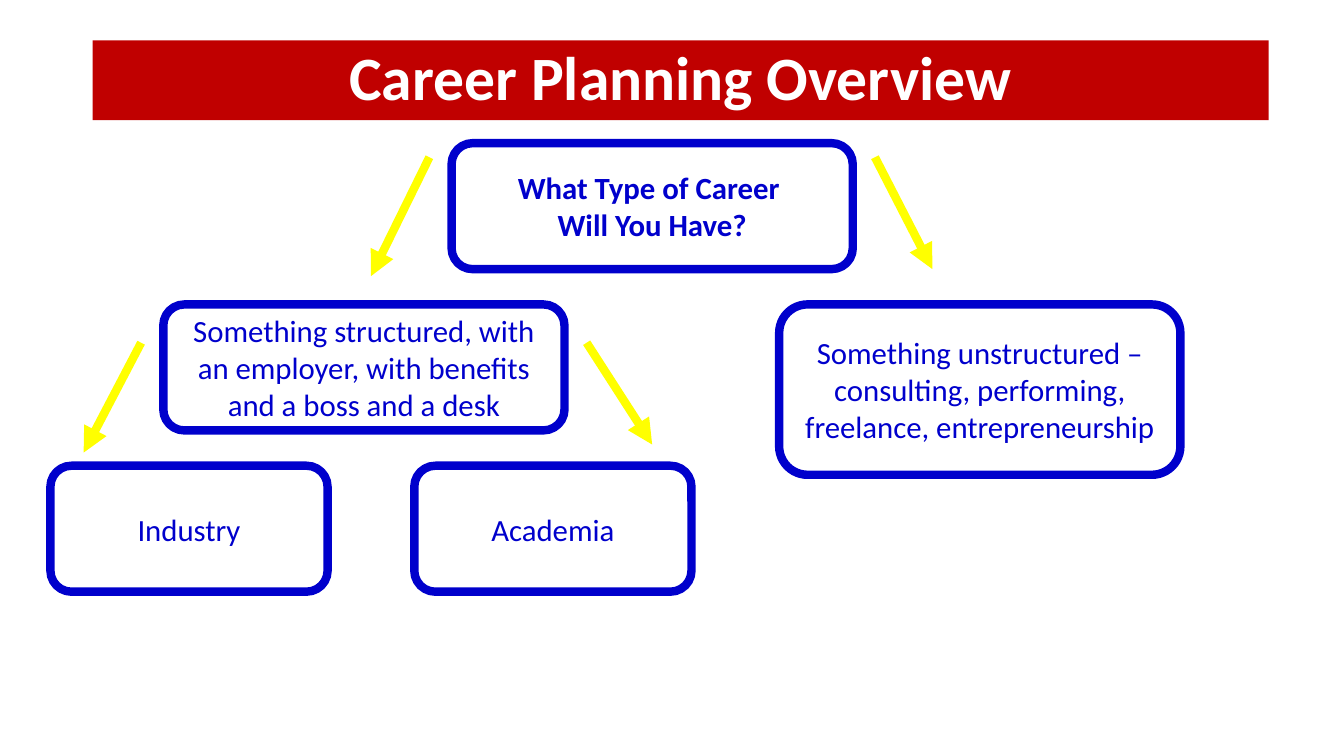
"""Build the career planning overview slide as a small decision tree."""
from dataclasses import dataclass

from lxml.etree import SubElement
from pptx import Presentation
from pptx.dml.color import RGBColor
from pptx.enum.shapes import MSO_CONNECTOR, MSO_SHAPE
from pptx.enum.text import MSO_ANCHOR, MSO_AUTO_SIZE, PP_ALIGN
from pptx.oxml.ns import qn
from pptx.slide import Slide
from pptx.text.text import TextFrame
from pptx.util import Inches, Pt

COLORS = {"banner": "C00000", "box": "0000CC", "arrow": "FFFF00", "white": "FFFFFF"}
SLIDE_WIDTH, SLIDE_HEIGHT = Inches(13.33), Inches(7.5)
COLUMN, ROW = SLIDE_WIDTH / 160, SLIDE_HEIGHT / 90
FIRST_LEVEL, LEVEL_STEP = 17.04, 19.2
WIDE, NARROW = 47.76, 33
LINE_WIDTH = Pt(6)
FRAME_FORMAT = {
    "word_wrap": True,
    "auto_size": MSO_AUTO_SIZE.NONE,
    "vertical_anchor": MSO_ANCHOR.MIDDLE,
}


@dataclass
class Choice:
    lines: tuple[str, ...]
    column: float
    level: int
    columns: float = WIDE
    rows: float = 15
    bold: bool = False


@dataclass
class Arrow:
    start: tuple[float, float]
    end: tuple[float, float]


CHOICES = [
    Choice(("What Type of Career ", "Will You Have?"), 53.76, 0, bold=True),
    Choice(("Something structured, with an employer, with benefits "
            "and a boss and a desk",), 19.44, 1),
    Choice(("Something unstructured – consulting, performing, "
            "freelance, entrepreneurship",), 92.76, 1, rows=20.28),
    Choice(("Industry",), 6, 2, NARROW),
    Choice(("Academia",), 49.32, 2, NARROW),
]
ARROWS = [
    Arrow((51.12, 18.72), (44.16, 32.88)),
    Arrow((16.8, 40.8), (9.96, 53.88)),
    Arrow((69.84, 40.8), (77.64, 52.92)),
    Arrow((104.16, 18.72), (111, 32.04)),
]


def color(name: str) -> RGBColor:
    """Return the named palette color."""
    return RGBColor.from_string(COLORS[name])


def across(columns: float) -> int:
    """Convert grid columns to a length."""
    return round(columns * COLUMN)


def down(rows: float) -> int:
    """Convert grid rows to a length."""
    return round(rows * ROW)


def write(frame: TextFrame, lines: tuple[str, ...], size: int, ink: str, bold: bool) -> None:
    """Write centered paragraphs in one format."""
    for name, value in FRAME_FORMAT.items():
        setattr(frame, name, value)
    frame.text = "\n".join(lines)
    font_format = {"name": "Calibri", "size": Pt(size), "bold": bold}
    for para in frame.paragraphs:
        para.alignment = PP_ALIGN.CENTER
        for span in para.runs:
            for name, value in font_format.items():
                setattr(span.font, name, value)
            span.font.color.rgb = color(ink)


def draw_title(page: Slide) -> None:
    """Turn the title placeholder into the banner."""
    title = page.shapes.title
    place = {"left": across(11.04), "top": down(4.8), "width": across(140), "height": down(9.5)}
    for name, value in place.items():
        setattr(title, name, value)
    title.fill.solid()
    title.fill.fore_color.rgb = color("banner")
    write(title.text_frame, ("Career Planning Overview",), 44, "white", True)
    title.text_frame.paragraphs[0].line_spacing = 0.9


def draw_choice(page: Slide, choice: Choice) -> None:
    """Draw one rounded box of the tree."""
    box = page.shapes.add_shape(
        MSO_SHAPE.ROUNDED_RECTANGLE,
        across(choice.column), down(FIRST_LEVEL + choice.level * LEVEL_STEP),
        across(choice.columns), down(choice.rows),
    )
    box.shadow.inherit = False
    box.fill.solid()
    box.fill.fore_color.rgb = color("white")
    box.line.color.rgb = color("box")
    box.line.width = LINE_WIDTH
    write(box.text_frame, choice.lines, 22, "box", choice.bold)


def draw_arrow(page: Slide, arrow: Arrow) -> None:
    """Draw one arrow between tree levels."""
    (start_column, start_row), (end_column, end_row) = arrow.start, arrow.end
    link = page.shapes.add_connector(
        MSO_CONNECTOR.STRAIGHT,
        across(start_column), down(start_row), across(end_column), down(end_row),
    )
    link.line.color.rgb = color("arrow")
    link.line.width = LINE_WIDTH
    properties = link._element.spPr
    SubElement(properties.find(qn("a:ln")), qn("a:tailEnd"), type="triangle")
    SubElement(properties, qn("a:effectLst"))


def main() -> None:
    """Assemble and save the deck."""
    deck = Presentation()
    deck.slide_width, deck.slide_height = SLIDE_WIDTH, SLIDE_HEIGHT
    page = deck.slides.add_slide(deck.slide_layouts.get_by_name("Title Only"))
    draw_title(page)
    for choice in CHOICES:
        draw_choice(page, choice)
    for arrow in ARROWS:
        draw_arrow(page, arrow)
    deck.save("out.pptx")


if __name__ == "__main__":
    main()
